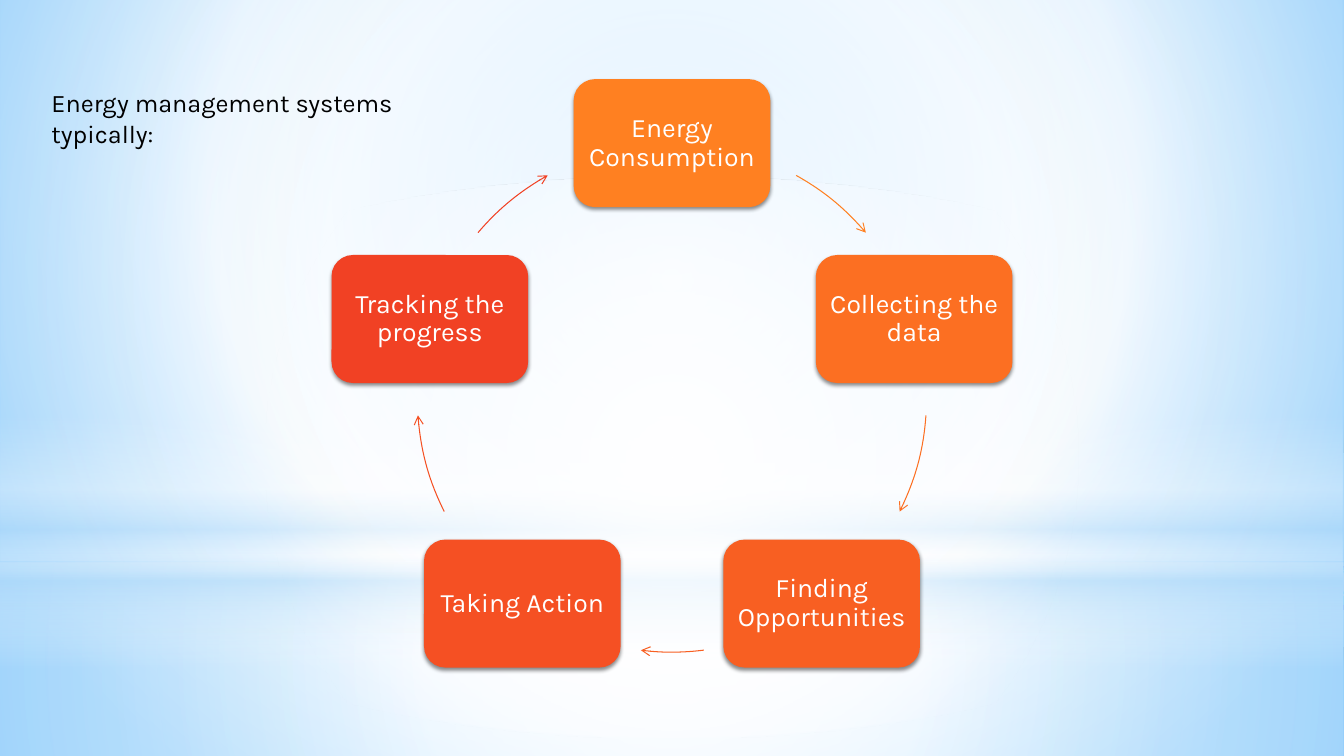
from dataclasses import dataclass
from math import cos, radians, sin

from lxml import etree
from pptx import Presentation
from pptx.dml.color import RGBColor
from pptx.enum.shapes import MSO_SHAPE
from pptx.enum.text import MSO_ANCHOR, MSO_AUTO_SIZE, PP_ALIGN
from pptx.oxml.ns import qn
from pptx.util import Inches, Pt

RECT, OVAL = MSO_SHAPE.RECTANGLE, MSO_SHAPE.OVAL
ROUNDED, ARC = MSO_SHAPE.ROUNDED_RECTANGLE, MSO_SHAPE.ARC
TOP, MIDDLE = MSO_ANCHOR.TOP, MSO_ANCHOR.MIDDLE
LEFT, CENTER = PP_ALIGN.LEFT, PP_ALIGN.CENTER
NO_FIT = MSO_AUTO_SIZE.NONE
TITLE_ONLY = 5
WIDTH, HEIGHT = Inches(13.33), Inches(7.5)


@dataclass(frozen=True)
class Theme:
    font: str = "Karla"
    title_size: float = 18
    step_size: float = 19
    line_width: float = 0.75
    dark: str = "000000"
    light: str = "FFFFFF"
    pale: str = "B4DCFA"
    sky: str = "9ED5FF"
    blue: str = "5BB9FF"
    steps: tuple = ("FF8021", "FC6F22", "F85F22", "F55023", "F14124")


@dataclass(frozen=True)
class Stop:
    pos: int
    color: str
    opacity: int = 100


@dataclass(frozen=True)
class Band:
    """Backdrop shape; top and height are percent of the slide height."""
    shape: int
    top: float
    height: float
    stops: tuple
    focus: tuple | None = (50, 50, 50, 50)


@dataclass(frozen=True)
class Step:
    """Cycle step; its arrow runs between two clockwise degrees from the top."""
    text: str
    color: str
    start: float
    end: float


T = Theme()

# Cycle geometry, in percent of the slide width (x) and height (y)
CENTER_X, CENTER_Y, RADIUS_Y = 50, 52.6, 33.67
BOX_W, BOX_H = 14.63, 16.93
TITLE_BOX = (3.08, 10.93, 34.43, 9.3)

BACKDROP = (Stop(0, T.sky), Stop(60, T.light), Stop(100, T.blue))
BANDS = (
    Band(RECT, 74.4, 25.6,
         (Stop(0, T.light, 91), Stop(37, T.light, 76), Stop(100, T.pale, 79))),
    Band(RECT, 0, 74.4,
         (Stop(0, T.light, 89), Stop(48, T.light, 62), Stop(100, T.pale, 79))),
    Band(RECT, 54.93, 33.33,
         (Stop(0, T.light, 0), Stop(29, T.light, 30), Stop(45, T.pale, 40),
          Stop(55, T.light, 26), Stop(65, T.pale, 60), Stop(100, T.light, 0)), None),
    Band(OVAL, 23.33, 74.4, (Stop(0, T.light), Stop(56, T.light, 0))),
)
LABELS = ("Energy Consumption", "Collecting the data", "Finding Opportunities",
          "Taking Action", "Tracking the progress")
SWEEPS = ((29.2, 49.6), (94, 116.6), (172.8, 187), (243.4, 266), (310.4, 330.8))
STEPS = tuple(Step(label, color, *sweep)
              for label, color, sweep in zip(LABELS, T.steps, SWEEPS))


def area(left: float, top: float, width: float, height: float) -> tuple:
    """Turn percent of the slide into lengths."""
    return (int(WIDTH * left / 100), int(HEIGHT * top / 100),
            int(WIDTH * width / 100), int(HEIGHT * height / 100))


def add_node(parent, tag: str, **attrs):
    return etree.SubElement(parent, qn(tag), {k: str(v) for k, v in attrs.items()})


def set_gradient(owner, stops: tuple, focus: tuple | None) -> None:
    """Put a gradient in place of the empty fill of an element."""
    old = owner.find(qn("a:noFill"))
    grad = etree.Element(qn("a:gradFill"), rotWithShape="1")
    stop_list = add_node(grad, "a:gsLst")
    for stop in stops:
        gs = add_node(stop_list, "a:gs", pos=stop.pos * 1000)
        clr = add_node(gs, "a:srgbClr", val=stop.color)
        if stop.opacity < 100:
            add_node(clr, "a:alpha", val=stop.opacity * 1000)
    if focus:
        circle = add_node(grad, "a:path", path="circle")
        add_node(circle, "a:fillToRect",
                 **{side: value * 1000 for side, value in zip("ltrb", focus)})
    else:
        add_node(grad, "a:lin", ang=90 * 60000, scaled=0)
    owner.replace(old, grad)


def write(tf, text: str, frame: dict, para: dict, size: float, color: str) -> None:
    for name, value in frame.items():
        setattr(tf, name, value)
    p = tf.paragraphs[0]
    for name, value in para.items():
        setattr(p, name, value)
    r = p.add_run()
    r.text = text
    for name, value in {"name": T.font, "size": Pt(size), "bold": False}.items():
        setattr(r.font, name, value)
    r.font.color.rgb = RGBColor.from_string(color)


def add_band(slide, band: Band) -> None:
    sp = slide.shapes.add_shape(band.shape, *area(0, band.top, 100, band.height))
    sp.shadow.inherit = False
    sp.line.fill.background()
    sp.fill.background()
    set_gradient(sp._element.spPr, band.stops, band.focus)


def add_box(slide, step: Step, angle: float) -> None:
    radius_x = RADIUS_Y * HEIGHT / WIDTH
    x = CENTER_X + radius_x * sin(radians(angle))
    y = CENTER_Y - RADIUS_Y * cos(radians(angle))
    sp = slide.shapes.add_shape(
        ROUNDED, *area(x - BOX_W / 2, y - BOX_H / 2, BOX_W, BOX_H))
    sp.fill.solid()
    sp.fill.fore_color.rgb = RGBColor.from_string(step.color)
    sp.line.fill.background()
    sp.shadow.inherit = False
    shadow = add_node(sp._element.spPr.find(qn("a:effectLst")), "a:outerShdw",
                      blurRad=Pt(3.1), dist=Pt(1.8), dir=90 * 60000, rotWithShape=0)
    add_node(add_node(shadow, "a:srgbClr", val=T.dark), "a:alpha", val=45000)
    frame = {"word_wrap": True, "vertical_anchor": MIDDLE}
    for side in ("left", "right", "top", "bottom"):
        frame[f"margin_{side}"] = Inches(0.06)
    write(sp.text_frame, step.text, frame,
          {"alignment": CENTER, "line_spacing": 0.9}, T.step_size, T.light)


def add_arrow(slide, step: Step) -> None:
    radius_x = RADIUS_Y * HEIGHT / WIDTH
    sp = slide.shapes.add_shape(
        ARC, *area(CENTER_X - radius_x, CENTER_Y - RADIUS_Y, 2 * radius_x, 2 * RADIUS_Y))
    # Arc angles count from three o'clock, in units of 1/0.6 degree
    for i, angle in enumerate((step.start, step.end)):
        sp.adjustments[i] = (angle - 90) % 360 * 0.6
    sp.shadow.inherit = False
    sp.fill.background()
    sp.line.color.rgb = RGBColor.from_string(step.color)
    sp.line.width = Pt(T.line_width)
    add_node(sp._element.spPr.find(qn("a:ln")), "a:tailEnd", type="arrow")


def main() -> None:
    prs = Presentation()
    prs.slide_width, prs.slide_height = WIDTH, HEIGHT
    slide = prs.slides.add_slide(prs.slide_layouts[TITLE_ONLY])

    # Backdrop
    slide.background.fill.background()
    set_gradient(slide._element.find(".//" + qn("p:bgPr")), BACKDROP, (20, 10, 20, 60))
    for band in BANDS:
        add_band(slide, band)

    # Cycle of steps
    for i, step in enumerate(STEPS):
        add_box(slide, step, i * 360 / len(STEPS))
        add_arrow(slide, step)

    # Title
    title = slide.shapes.title
    title.left, title.top, title.width, title.height = area(*TITLE_BOX)
    write(title.text_frame, "Energy management systems typically:",
          {"word_wrap": True, "vertical_anchor": TOP, "auto_size": NO_FIT},
          {"alignment": LEFT}, T.title_size, T.dark)
    slide.shapes._spTree.append(title._element)

    prs.save("out.pptx")


if __name__ == "__main__":
    main()
